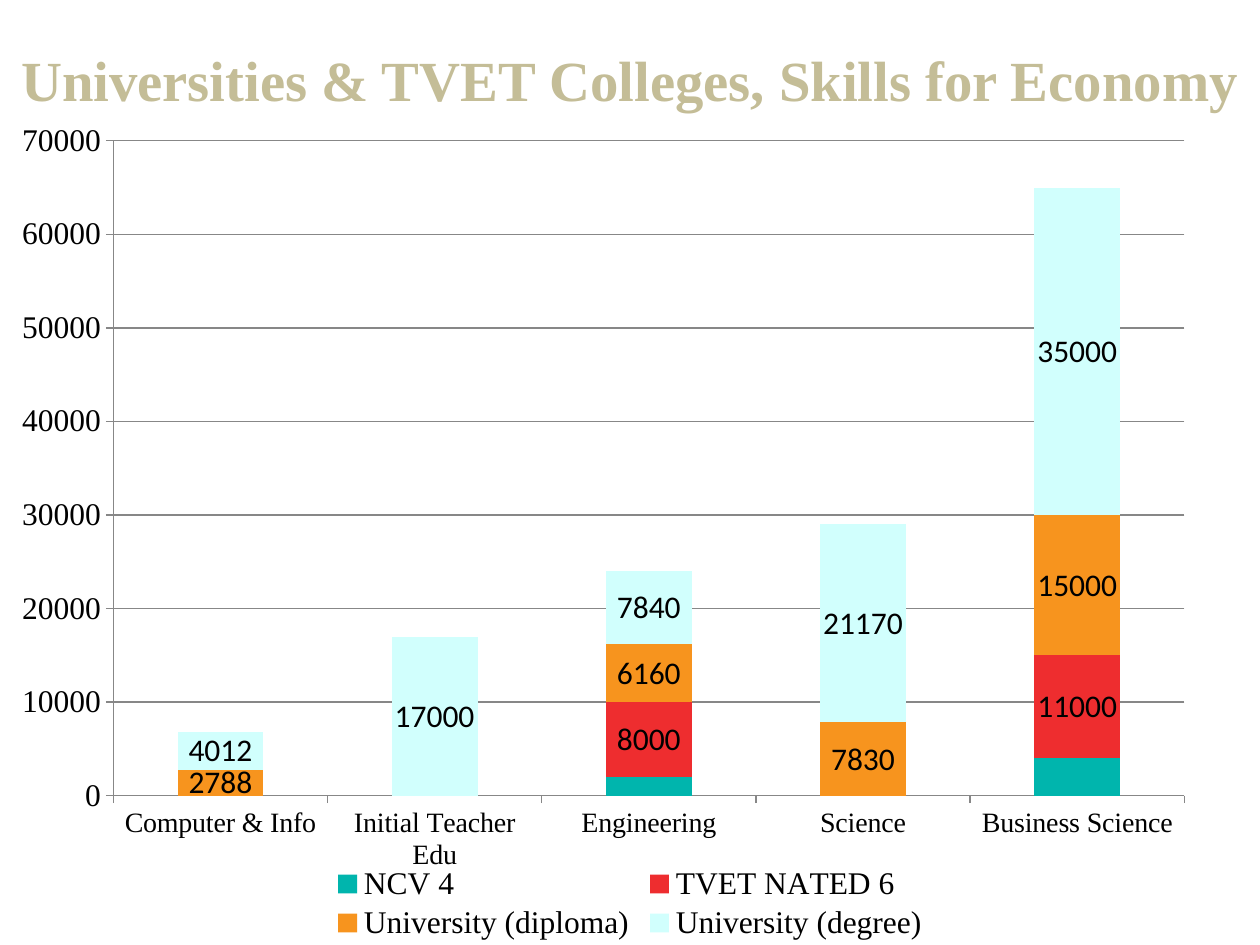
from dataclasses import dataclass

from lxml import etree
from pptx import Presentation
from pptx.chart.data import CategoryChartData
from pptx.dml.color import RGBColor
from pptx.enum.chart import XL_CHART_TYPE, XL_LABEL_POSITION, XL_LEGEND_POSITION, XL_TICK_MARK
from pptx.enum.text import MSO_ANCHOR, PP_ALIGN
from pptx.oxml.ns import qn
from pptx.util import Emu, Pt

STACKED = XL_CHART_TYPE.COLUMN_STACKED
LABEL_CENTER = XL_LABEL_POSITION.CENTER
LEGEND_BOTTOM = XL_LEGEND_POSITION.BOTTOM
TICK_OUT = XL_TICK_MARK.OUTSIDE
MIDDLE = MSO_ANCHOR.MIDDLE
CENTER = PP_ALIGN.CENTER

PX = 914400 / 126
WIDTH, HEIGHT = 1260, 945


@dataclass(frozen=True)
class Theme:
    heading_font: str = "Times New Roman"
    label_font: str = "Calibri"
    heading: str = "C4BD97"
    text: str = "000000"
    rule: str = "878787"
    background: str = "FFFFFF"
    heading_size: float = 32.4
    body_size: int = 18
    category_size: int = 16


def emu(px):
    return Emu(round(px * PX))


def rgb(value):
    return RGBColor.from_string(value)


def set_font(font, name, size, color, bold=False):
    font.name, font.size, font.bold = name, Pt(size), bold
    font.color.rgb = rgb(color)


def manual_layout(box, inner=False):
    layout = etree.Element(qn("c:layout"))
    manual = etree.SubElement(layout, qn("c:manualLayout"))
    settings = [("layoutTarget", "inner")] if inner else []
    settings += [("xMode", "edge"), ("yMode", "edge"), *zip("xywh", box)]
    for tag, value in settings:
        etree.SubElement(manual, qn(f"c:{tag}")).set("val", str(value))
    return layout


class SlideBuilder:
    def __init__(self, slide, theme):
        self.slide = slide
        self.theme = theme
        fill = slide.background.fill
        fill.solid()
        fill.fore_color.rgb = rgb(theme.background)

    def heading(self, text, *box):
        frame = self.slide.shapes.add_textbox(*map(emu, box)).text_frame
        frame.word_wrap = True
        frame.vertical_anchor = MIDDLE
        frame.margin_left = frame.margin_right = 0
        line = frame.paragraphs[0]
        line.text = text
        line.alignment = CENTER
        set_font(line.font, self.theme.heading_font, self.theme.heading_size,
                 self.theme.heading, bold=True)

    def stacked_columns(self, categories, series, plot_box, legend_box, *box):
        theme = self.theme
        data = CategoryChartData(number_format="General")
        data.categories = categories
        for name, values, *_ in series:
            data.add_series(name, values)
        chart = self.slide.shapes.add_chart(STACKED, *map(emu, box), data).chart
        chart.has_title = False
        set_font(chart.font, theme.label_font, theme.body_size, theme.text)

        plot = chart.plots[0]
        plot.gap_width, plot.overlap = 150, 100
        plot.vary_by_categories = False
        for columns, (_, _, color, labelled) in zip(plot.series, series):
            columns.format.fill.solid()
            columns.format.fill.fore_color.rgb = rgb(color)
            if labelled:
                labels = columns.data_labels
                labels.show_value = True
                labels.position = LABEL_CENTER
                set_font(labels.font, theme.label_font, theme.body_size, theme.text)

        self.axis(chart.category_axis, theme.category_size)
        self.axis(chart.value_axis, theme.body_size)
        chart.value_axis.minimum_scale = 0
        chart.value_axis.maximum_scale = 70000
        chart.value_axis.major_unit = 10000
        chart.value_axis.has_major_gridlines = True
        self.rule(chart.value_axis.major_gridlines)
        self.legend(chart, legend_box)

        area = chart.element.find(f".//{qn('c:plotArea')}")
        for automatic in area.findall(qn("c:layout")):
            area.remove(automatic)
        area.insert(0, manual_layout(plot_box, inner=True))

    def axis(self, axis, size):
        axis.major_tick_mark = TICK_OUT
        set_font(axis.tick_labels.font, self.theme.heading_font, size, self.theme.text)
        self.rule(axis)

    def rule(self, part):
        part.format.line.color.rgb = rgb(self.theme.rule)
        part.format.line.width = Pt(0.75)

    def legend(self, chart, box):
        chart.has_legend = True
        chart.legend.position = LEGEND_BOTTOM
        chart.legend.include_in_layout = False
        set_font(chart.legend.font, self.theme.heading_font, self.theme.body_size,
                 self.theme.text)
        position = chart.element.find(f".//{qn('c:legendPos')}")
        position.addnext(manual_layout(box))


def main():
    deck = Presentation()
    deck.slide_width, deck.slide_height = emu(WIDTH), emu(HEIGHT)
    builder = SlideBuilder(deck.slides.add_slide(deck.slide_layouts[6]), Theme())

    fields = ["Computer & Info", "Initial Teacher Edu", "Engineering", "Science",
              "Business Science"]
    qualifications = [
        ("NCV 4", (0, None, 2000, None, 4000), "00B5AD", False),
        ("TVET NATED 6", (None, None, 8000, None, 11000), "EE2D2F", True),
        ("University (diploma)", (2788, None, 6160, 7830, 15000), "F7941E", True),
        ("University (degree)", (4012, 17000, 7840, 21170, 35000), "D1FFFD", True),
    ]
    chart_top = 116
    builder.stacked_columns(fields, qualifications, (0.09, 0.03, 0.85, 0.79),
                            (0.26, 0.9, 0.48, 0.1),
                            0, chart_top, WIDTH, HEIGHT - chart_top)
    builder.heading("Universities & TVET Colleges, Skills for Economy", 0, 0, WIDTH, 158)
    deck.save("out.pptx")


if __name__ == "__main__":
    main()
